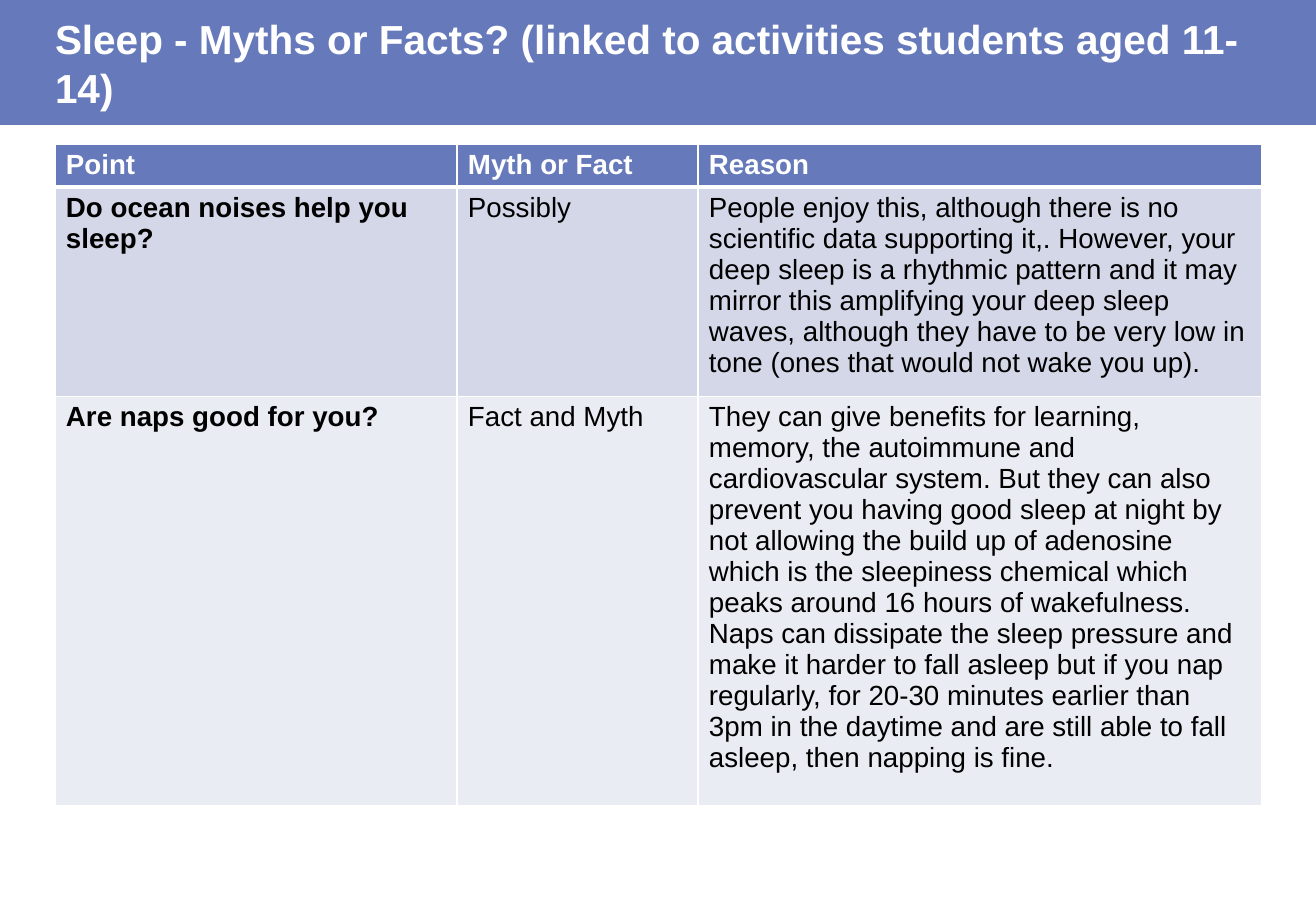
from lxml import etree
from pptx import Presentation
from pptx import util as u
from pptx.dml.color import RGBColor
from pptx.enum import shapes, text
from pptx.oxml.ns import qn

SCALE = 7526  # EMU per px
COLORS = {"blue": "6679BA", "white": "FFFFFF", "black": "000000",
          "band_dark": "D3D7E7", "band_light": "EAECF3"}


def px(*lengths):
    return [u.Emu(length * SCALE) for length in lengths]


def write(frame, words, size, color, bold=False, anchor=text.MSO_ANCHOR.TOP, inset=(0, 0)):
    frame.word_wrap = True
    frame.vertical_anchor = anchor
    frame.margin_left = frame.margin_right = px(inset[0])[0]
    frame.margin_top = frame.margin_bottom = px(inset[1])[0]
    span = frame.paragraphs[0].add_run()
    span.text = words
    span.font.name = "Arial"
    span.font.size = u.Pt(size)
    span.font.bold = bold
    span.font.color.rgb = RGBColor.from_string(COLORS[color])


deck = Presentation()
deck.slide_width, deck.slide_height = px(1316, 911)
page = deck.slides.add_slide(deck.slide_layouts[6])

# Title band
band = page.shapes.add_shape(shapes.MSO_SHAPE.RECTANGLE, *px(0, 0, 1316, 125))
band.shadow.inherit = False
band.fill.solid()
band.fill.fore_color.rgb = RGBColor.from_string(COLORS["blue"])
band.line.fill.background()

title = page.shapes.add_textbox(*px(55, 15, 1207, 96))
write(title.text_frame, "Sleep - Myths or Facts? (linked to activities students aged 11-14)",
      24, "white", bold=True, anchor=text.MSO_ANCHOR.MIDDLE)

# Table contents
rows = [
    ("Point", "Myth or Fact", "Reason"),
    ("Do ocean noises help you sleep?", "Possibly",
     "People enjoy this, although there is no scientific data supporting it,. "
     "However, your deep sleep is a rhythmic pattern and it may mirror this "
     "amplifying your deep sleep waves, although they have to be very low in "
     "tone (ones that would not wake you up)."),
    ("Are naps good for you?", "Fact and Myth",
     "They can give benefits for learning, memory, the autoimmune and "
     "cardiovascular system. But they can also prevent you having good sleep "
     "at night by not allowing the build up of adenosine which is the "
     "sleepiness chemical which peaks around 16 hours of wakefulness. Naps can "
     "dissipate the sleep pressure and make it harder to fall asleep but if "
     "you nap regularly, for 20-30 minutes earlier than 3pm in the daytime and "
     "are still able to fall asleep, then napping is fine."),
]
widths = (402, 241, 564)
heights = (42, 198, 383)
fills = ("blue", "band_dark", "band_light")

# Table
table = page.shapes.add_table(len(rows), len(widths),
                              *px(55, 144, sum(widths), sum(heights))).table
for column, width in zip(table.columns, px(*widths)):
    column.width = width
for row, height in zip(table.rows, px(*heights)):
    row.height = height

for r, row in enumerate(rows):
    for c, words in enumerate(row):
        cell = table.cell(r, c)
        header = r == 0
        properties = cell._tc.get_or_add_tcPr()

        # White borders, thicker under the header
        for side in ("L", "R", "T", "B"):
            thick = (r, side) in ((0, "B"), (1, "T"))
            line = etree.SubElement(properties, qn("a:ln" + side), w=str(u.Pt(3 if thick else 1)))
            solid = etree.SubElement(line, qn("a:solidFill"))
            etree.SubElement(solid, qn("a:srgbClr"), val=COLORS["white"])

        cell.fill.solid()
        cell.fill.fore_color.rgb = RGBColor.from_string(COLORS[fills[r]])
        write(cell.text_frame, words, 16.4, "white" if header else "black",
              bold=header or c == 0)
        cell.vertical_anchor = text.MSO_ANCHOR.TOP
        cell.margin_left = cell.margin_right = px(11)[0]
        cell.margin_top = cell.margin_bottom = px(5)[0]

deck.save("out.pptx")
